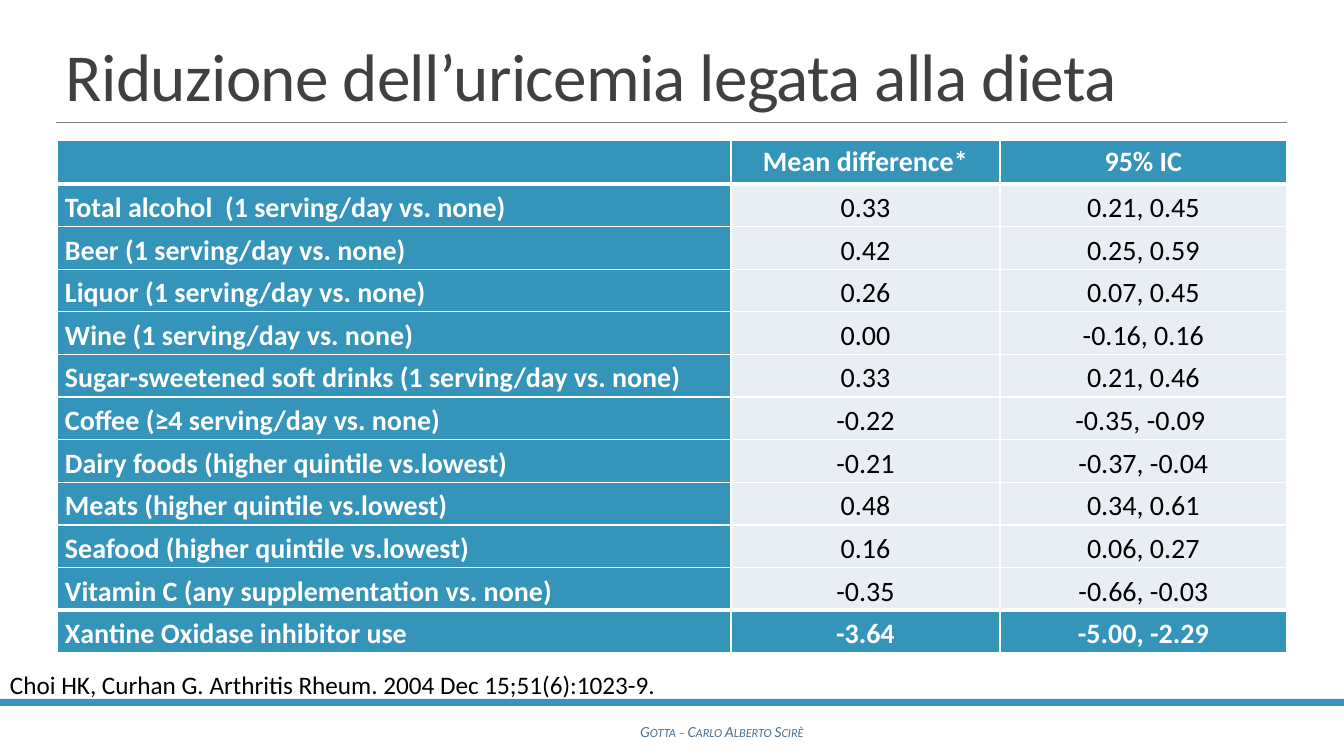
import pptx
import pptx.util
import pptx.oxml
import pptx.oxml.ns
import pptx.dml.color
import pptx.enum.shapes
import pptx.enum.text
import lxml.etree

RGB = pptx.dml.color.RGBColor
ALIGN = pptx.enum.text.PP_ALIGN
ANCHOR = pptx.enum.text.MSO_ANCHOR
Pt = pptx.util.Pt

FONT = "Calibri"
WHITE = RGB(0xFF, 0xFF, 0xFF)
BLACK = RGB(0x00, 0x00, 0x00)
TEAL = RGB(0x34, 0x94, 0xBA)
PALE = RGB(0xE8, 0xEE, 0xF3)
TITLE_GREY = RGB(0x40, 0x40, 0x40)
RULE_GREY = RGB(0x80, 0x80, 0x80)
FOOTER_BLUE = RGB(0x4A, 0x70, 0x90)

SLIDE_W, SLIDE_H = 1344, 756
COL_WIDTHS = (674, 269, 287)
HEADER_H = 44

ROWS = [
    ("", "Mean difference*", "95% IC"),
    ("Total alcohol  (1 serving/day vs. none)", "0.33", "0.21, 0.45"),
    ("Beer (1 serving/day vs. none)", "0.42", "0.25, 0.59"),
    ("Liquor (1 serving/day vs. none)", "0.26", "0.07, 0.45"),
    ("Wine (1 serving/day vs. none)", "0.00", "-0.16, 0.16"),
    ("Sugar-sweetened soft drinks (1 serving/day vs. none)", "0.33", "0.21, 0.46"),
    ("Coffee (≥4 serving/day vs. none)", "-0.22", "-0.35, -0.09 "),
    ("Dairy foods (higher quintile vs.lowest)", "-0.21", "-0.37, -0.04"),
    ("Meats (higher quintile vs.lowest)", "0.48", "0.34, 0.61"),
    ("Seafood (higher quintile vs.lowest)", "0.16", "0.06, 0.27"),
    ("Vitamin C (any supplementation vs. none)", "-0.35", "-0.66, -0.03"),
    ("Xantine Oxidase inhibitor use", "-3.64", "-5.00, -2.29"),
]


def px(n):
    return pptx.util.Emu(round(n * 914400 / 100.8))


def write(tf, text, size, color, bold=False, align=ALIGN.LEFT, spacing=None):
    """Fill a text frame with one styled paragraph and return its font."""
    tf.text = text
    p = tf.paragraphs[0]
    p.alignment = align
    p.line_spacing = spacing
    font = p.runs[0].font if p.runs else p.font
    font.name, font.size, font.bold = FONT, Pt(size), bold
    font.color.rgb = color
    return font


def add_text(slide, box, text, size, color, **style):
    sp = slide.shapes.add_textbox(*map(px, box))
    font = write(sp.text_frame, text, size, color, **style)
    return sp.text_frame, font, sp.text_frame.paragraphs[0].runs[0]


def add_title(slide, box):
    x, y, w, h = box
    tf, _, r = add_text(slide, box, "Riduzione dell’uricemia legata alla dieta",
                        48, TITLE_GREY, spacing=0.85)
    tf.word_wrap = True
    tf.vertical_anchor = ANCHOR.BOTTOM
    r._r.get_or_add_rPr().set("spc", "-50")
    rule_y = px(y + h + 2)
    rule = slide.shapes.add_connector(
        pptx.enum.shapes.MSO_CONNECTOR.STRAIGHT, px(x), rule_y, px(x + w), rule_y)
    rule.line.color.rgb = RULE_GREY
    rule.line.width = Pt(0.5)
    lxml.etree.SubElement(rule._element.spPr, pptx.oxml.ns.qn("a:effectLst"))


def set_borders(cell, top, bottom):
    tcPr = cell._tc.get_or_add_tcPr()
    for side, width in (("L", 1), ("R", 1), ("T", top), ("B", bottom)):
        tcPr.append(pptx.oxml.parse_xml(
            f'<a:ln{side} {pptx.oxml.ns.nsdecls("a")} w="{Pt(width)}">'
            f'<a:solidFill><a:srgbClr val="{WHITE}"/></a:solidFill></a:ln{side}>'))


def add_diet_table(slide, box):
    last = len(ROWS) - 1
    table = slide.shapes.add_table(
        len(ROWS), len(COL_WIDTHS), *map(px, box)).table
    table.horz_banding = False
    for column, width in zip(table.columns, COL_WIDTHS):
        column.width = px(width)
    for i, row in enumerate(ROWS):
        table.rows[i].height = px((box[3] - HEADER_H) / last if i else HEADER_H)
        for j, text in enumerate(row):
            cell = table.cell(i, j)
            strong = j == 0 or i in (0, last)
            cell.margin_left = cell.margin_right = px(8)
            cell.margin_top = cell.margin_bottom = 0
            cell.vertical_anchor = ANCHOR.MIDDLE if i else ANCHOR.TOP
            set_borders(cell, top=3 if i in (1, last) else 1,
                        bottom=3 if i in (0, last - 1) else 1)
            cell.fill.solid()
            cell.fill.fore_color.rgb = TEAL if strong else PALE
            write(cell.text_frame, text, 20, WHITE if strong else BLACK, strong,
                  ALIGN.CENTER if j else ALIGN.LEFT, 1.15)


def add_citation(slide, box):
    tf, _, _ = add_text(
        slide, box, "Choi HK, Curhan G. Arthritis Rheum. 2004 Dec 15;51(6):1023-9.",
        18, BLACK)
    tf.word_wrap = False
    tf.auto_size = pptx.enum.text.MSO_AUTO_SIZE.SHAPE_TO_FIT_TEXT


def add_footer(slide, box):
    x, y, w, h = box
    band = slide.shapes.add_shape(
        pptx.enum.shapes.MSO_SHAPE.RECTANGLE, px(x), px(y), px(w), px(7))
    band.shadow.inherit = False
    band.fill.solid()
    band.fill.fore_color.rgb = TEAL
    band.line.fill.background()
    tf, font, r = add_text(slide, (x + 260, y + 18, 924, 29),
                           "Gotta – Carlo Alberto Scirè", 11, FOOTER_BLUE,
                           align=ALIGN.CENTER)
    tf.word_wrap = True
    tf.auto_size = pptx.enum.text.MSO_AUTO_SIZE.SHAPE_TO_FIT_TEXT
    font.italic = True
    r._r.get_or_add_rPr().set("cap", "small")


def main():
    prs = pptx.Presentation()
    prs.slide_width, prs.slide_height = px(SLIDE_W), px(SLIDE_H)
    slide = prs.slides.add_slide(prs.slide_layouts[6])
    add_footer(slide, (0, 699, SLIDE_W, 57))
    add_title(slide, (56, 31, 1231, 89))
    add_diet_table(slide, (57, 140, sum(COL_WIDTHS), 513))
    add_citation(slide, (0, 664, 673, 40))
    prs.save("out.pptx")


if __name__ == "__main__":
    main()
